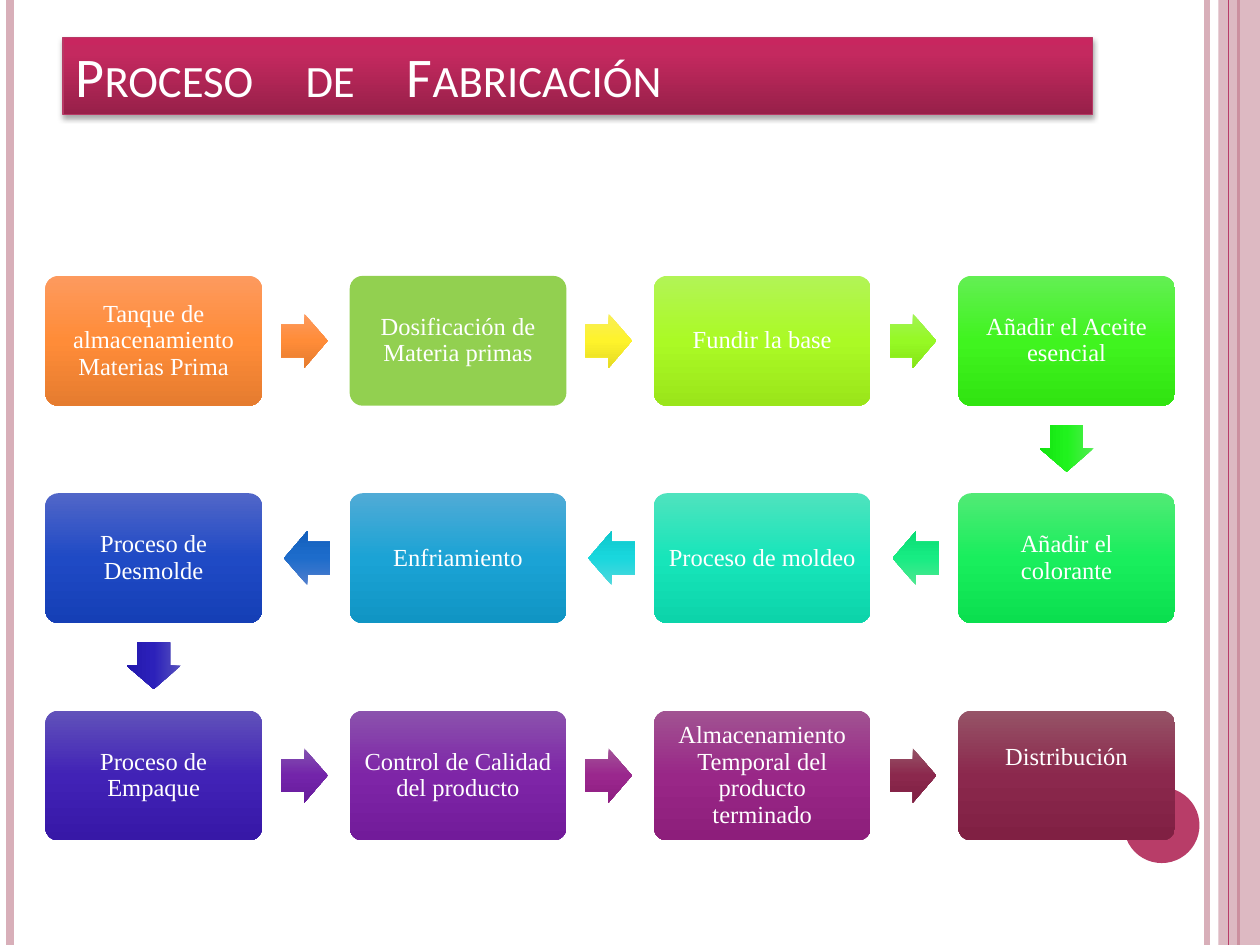
from lxml.etree import SubElement as Sub
from pptx import Presentation
from pptx.dml.color import RGBColor as Rgb
from pptx.enum.shapes import MSO_CONNECTOR as Conn, MSO_SHAPE as Kind
from pptx.enum.text import MSO_ANCHOR as Anchor, MSO_AUTO_SIZE as Auto, PP_ALIGN as Align
from pptx.oxml.ns import qn
from pptx.util import Inches as In, Pt


def paint(fill, cols, marks=(0, 50, 100), angle=270):
    """Fill with one hex colour, or with a gradient of several."""
    cols = cols.split()
    if len(cols) == 1:
        fill.solid()
        fill.fore_color.rgb = Rgb.from_string(cols[0])
        return
    fill.gradient()
    fill.gradient_angle = angle
    stops = fill._xPr.find(qn("a:gradFill")).find(qn("a:gsLst"))
    for old in list(stops):
        stops.remove(old)
    for mark, col in zip(marks, cols):
        stop = Sub(stops, qn("a:gs"), pos=str(mark * 1000))
        Sub(stop, qn("a:srgbClr"), val=col)


def style(item, form):
    for name, value in form.items():
        setattr(item, name, value)


deck = Presentation()
W, H = In(10), In(7.5)
deck.slide_width, deck.slide_height = W, H
slide = deck.slides.add_slide(deck.slide_layouts[5])
shapes = slide.shapes

# Side band and rules
band = shapes.add_shape(Kind.RECTANGLE, In(9.67), 0, In(0.33), H)
dot = shapes.add_shape(Kind.OVAL, In(8.92), In(6.25), In(0.6), In(0.6))
for part, col in ((band, "D8AFB9"), (dot, "B83D68")):
    paint(part.fill, col)
    part.line.fill.background()
    part.shadow.inherit = False
tint = band.fill._xPr.find(qn("a:solidFill"))[0]
Sub(tint, qn("a:alpha"), val="87000")

for x, col, wide in ((9.58, "D8AFB9", 3), (0.08, "D8AFB9", 4.5),
                     (9.83, "D8AFB9", 1.5), (9.75, "B83D68", 0.75)):
    # The two thin rules differ only in tone over the band
    rule = shapes.add_connector(Conn.STRAIGHT, In(x), 0, In(x), H)
    paint(rule.line.fill, {9.83: "CB909F", 9.75: "B83D68"}.get(x, col))
    rule.line.width = Pt(wide)
    Sub(rule._element.spPr, qn("a:effectLst"))

# Title bar
title = shapes.title
style(title, dict(left=In(0.5), top=In(0.3), width=In(8.17), height=In(0.61)))
paint(title.fill, "972049 C4295F C8265F", (0, 80, 100), 90)
paint(title.line.fill, "B73965")
title.line.width = Pt(0.75)
title.shadow.inherit = False
glow = Sub(title._element.spPr.find(qn("a:effectLst")), qn("a:outerShdw"),
           blurRad=str(Pt(3.1)), dist=str(Pt(1.8)), dir="5400000", rotWithShape="0")
Sub(Sub(glow, qn("a:srgbClr"), val="000000"), qn("a:alpha"), val="35000")
style(title.text_frame, dict(vertical_anchor=Anchor.BOTTOM, word_wrap=True,
                             auto_size=Auto.NONE))
para = title.text_frame.paragraphs[0]
para.alignment = Align.LEFT
for word in ("Proceso", " ", "de", " ", "Fabricación"):
    run = para.add_run()
    run.text = word
    style(run.font, dict(size=Pt(32), name="Calibri"))
    paint(run.font.fill, "FFFFFF")
    run.font._element.set("cap", "small")
    if word == " ":
        run.font._element.set("spc", "1200")

# Steps: text, box colours, colours of the arrow that leads to the next step
steps = [
    ("Tanque de almacenamiento Materias Prima", "FD9A5E FF8C38 E57C2F", "FD9A5E FF8C38 E57C2F"),
    ("Dosificación de Materia primas", "92D050", "F8EE59 FEF32B E5DA24"),
    ("Fundir la base", "B2F456 ABFA25 9AE51A", "A1F355 96F924 86E518"),
    ("Añadir el Aceite esencial", "63EF53 40F41F 31E411", "53ED52 20F31D 12E20F"),
    ("Añadir el colorante", "51EA75 19EE5D 0BDF4F", "50E791 17EC83 0ADC74"),
    ("Proceso de moldeo", "4FE3BE 17E5BA 0CD4AA", "4FD8DD 19D7DD 0EC7CC"),
    ("Enfriamiento", "50ABD6 1BA3D5 1095C4", "507ECD 1D6CCB 135FBC"),
    ("Proceso de Desmolde", "5166C8 1F4AC5 153FB6", "5651BE 2C21BA 2217AC"),
    ("Proceso de Empaque", "6152BA 4122B6 3718A7", "8352B0 7324AA 671B9C"),
    ("Control de Calidad del producto", "8B52AD 7E25A7 721B9A", "A25398 9A278D 8E1E81"),
    ("Almacenamiento Temporal del producto terminado", "A15392 992787 8D1E7B",
     "965467 8B284D 802043"),
    ("Distribución", "965467 8B284D 802043", None),
]

# Grid: the rows run right, then left, then right again
cols = 4
left, top, wide, high = 0.36, 2.19, 1.72, 1.03
dx, dy = 2.415, 1.725
long, thick = 0.37, 0.43
spots = []
for i in range(len(steps)):
    row, col = divmod(i, cols)
    spots.append((left + dx * (cols - 1 - col if row % 2 else col), top + dy * row))

for i, (text, tone, lead) in enumerate(steps):
    x, y = spots[i]
    box = shapes.add_shape(Kind.ROUNDED_RECTANGLE, In(x), In(y), In(wide), In(high))
    box.adjustments[0] = 0.1
    parts = [(box, tone)]
    frame = box.text_frame
    pad = In(0.08)
    style(frame, dict(word_wrap=True, vertical_anchor=Anchor.MIDDLE, margin_left=pad,
                      margin_right=pad, margin_top=pad, margin_bottom=pad))
    if not lead:
        frame.margin_bottom = In(0.37)  # the last label sits higher
    para = frame.paragraphs[0]
    style(para, dict(text=text, alignment=Align.CENTER, line_spacing=0.9))
    font = para.runs[0].font
    style(font, dict(size=Pt(14), name="Times New Roman"))
    paint(font.fill, "FFFFFF")

    if lead:
        # Just short of halfway to the next box
        nx, ny = spots[i + 1]
        mx = x + (nx - x) * 0.495 + (wide - long) / 2
        my = y + (ny - y) * 0.495 + (high - thick) / 2
        arrow = shapes.add_shape(Kind.RIGHT_ARROW, In(mx), In(my), In(long), In(thick))
        arrow.adjustments[0] = 0.6
        arrow.rotation = 90 if ny > y else 180 if nx < x else 0
        parts.append((arrow, lead))

    for part, tint in parts:
        paint(part.fill, tint)
        part.line.fill.background()
        part.shadow.inherit = False

deck.save("out.pptx")
